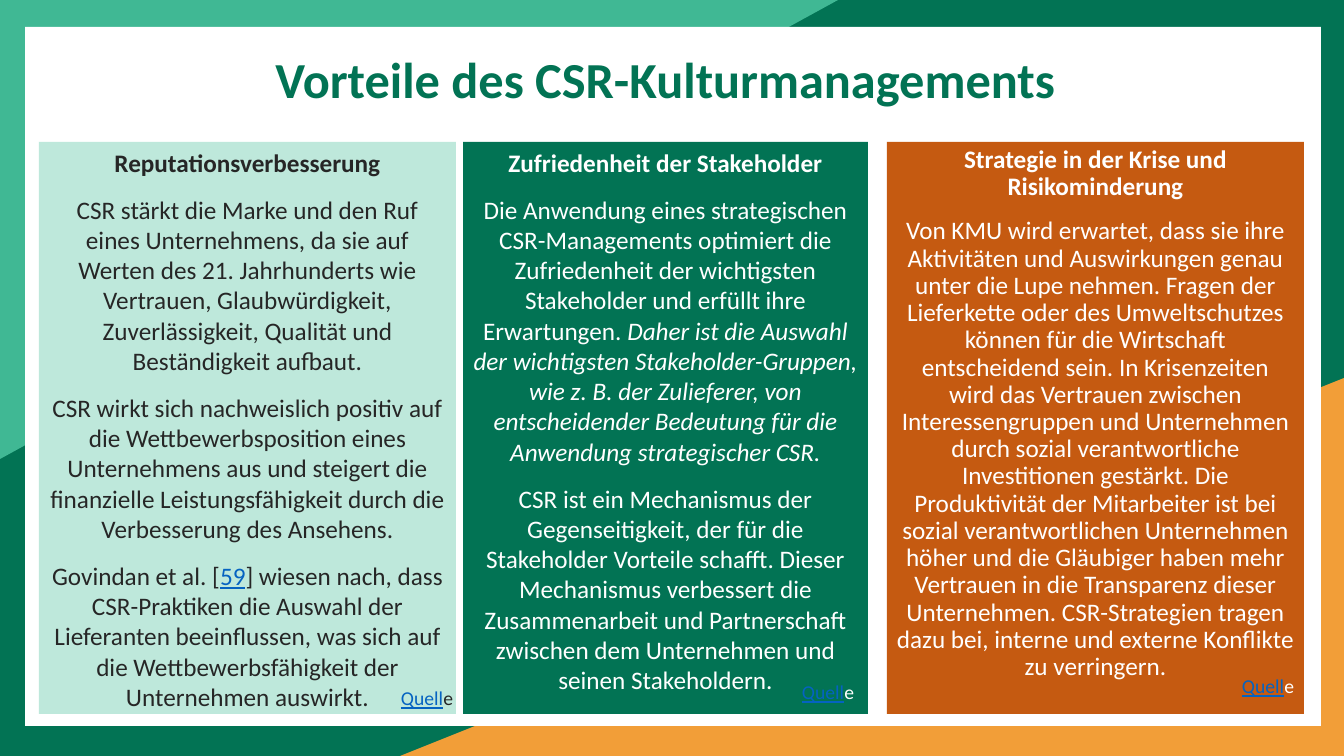
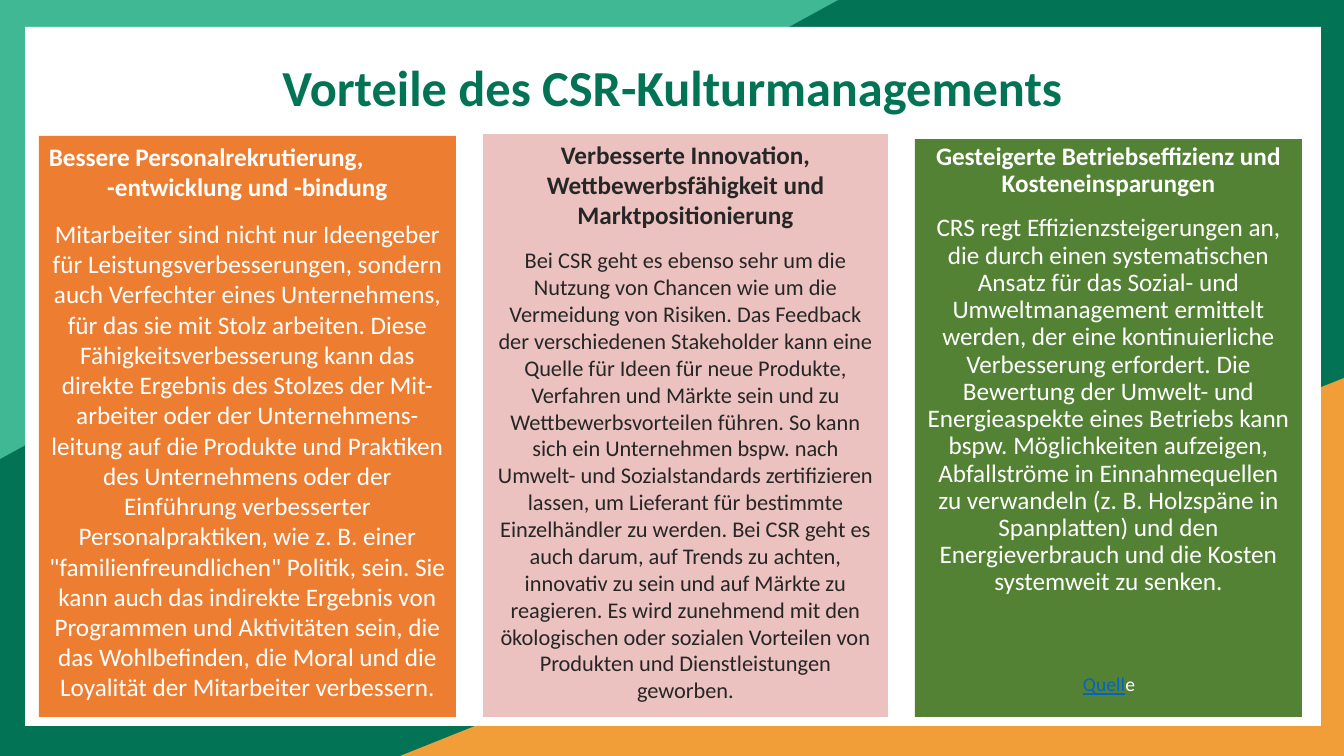
from dataclasses import dataclass

from pptx import Presentation
from pptx.dml.color import RGBColor
from pptx.enum.shapes import MSO_SHAPE
from pptx.enum.text import MSO_ANCHOR, PP_ALIGN
from pptx.util import Pt

RECTANGLE, TRIANGLE = MSO_SHAPE.RECTANGLE, MSO_SHAPE.ISOSCELES_TRIANGLE
LEFT, CENTER = PP_ALIGN.LEFT, PP_ALIGN.CENTER
TOP = MSO_ANCHOR.TOP
EMU_PER_PX = 914400 / 100.8


@dataclass(frozen=True)
class Theme:
    font: str = "Calibri"
    title_size: int = 36
    text_size: int = 18
    compact_size: int = 16
    source_size: int = 14
    paragraph_gap: int = 12
    title_spacing: float = 1.2
    tight_spacing: float = 0.9
    green: str = "027354"
    mint: str = "40B894"
    amber: str = "F29E38"
    white: str = "FFFFFF"
    dark: str = "262626"
    link: str = "0563C1"
    pale_mint: str = "BEE8DB"
    rust: str = "C55A11"
    orange: str = "ED7D31"
    pink: str = "EBC2BF"
    leaf: str = "548235"


THEME = Theme()
SLIDE_SIZE = (1344, 756)
TITLE = "Vorteile des CSR-Kulturmanagements"
TITLE_SIZE = (1157, 124)
SOURCE_SIZE = (120, 34)
SOURCE = [("Quell", "link"), ("e", "")]

FRAME = [
    (RECTANGLE, (0, 0, 1344, 756), THEME.green, 0),
    (TRIANGLE, (400, 378, 944, 378), THEME.amber, 0),
    (TRIANGLE, (0, 0, 838, 459), THEME.mint, 180),
    (RECTANGLE, (25, 27, 1296, 699), THEME.white, 0),
]

SLIDES = [
    {
        "title_at": (87, 31),
        "panels": [
            {
                "box": (39, 142, 417, 572),
                "fill": THEME.pale_mint,
                "color": THEME.dark,
                "heading": ["Reputationsverbesserung"],
                "body": [
                    "CSR stärkt die Marke und den Ruf eines Unternehmens, da sie auf Werten des 21. "
                    "Jahrhunderts wie Vertrauen, Glaubwürdigkeit, Zuverlässigkeit, Qualität und "
                    "Beständigkeit aufbaut.",
                    "CSR wirkt sich nachweislich positiv auf die Wettbewerbsposition eines Unternehmens "
                    "aus und steigert die finanzielle Leistungsfähigkeit durch die Verbesserung des "
                    "Ansehens.",
                    [
                        ("Govindan et al. [", ""),
                        ("59", "link"),
                        ("] wiesen nach, dass CSR-Praktiken die Auswahl der Lieferanten beeinflussen, "
                         "was sich auf die Wettbewerbsfähigkeit der Unternehmen auswirkt.", ""),
                    ],
                ],
                "source": (427, 681),
            },
            {
                "box": (463, 142, 405, 572),
                "fill": THEME.green,
                "heading": ["Zufriedenheit der Stakeholder"],
                "body": [
                    [
                        ("Die Anwendung eines strategischen CSR-Managements optimiert die Zufriedenheit "
                         "der wichtigsten Stakeholder und erfüllt ihre Erwartungen. ", ""),
                        ("Daher ist die Auswahl der wichtigsten Stakeholder-Gruppen, wie z. B. der "
                         "Zulieferer, von entscheidender Bedeutung für die Anwendung strategischer CSR.",
                         "italic"),
                    ],
                    "CSR ist ein Mechanismus der Gegenseitigkeit, der für die Stakeholder Vorteile "
                    "schafft. Dieser Mechanismus verbessert die Zusammenarbeit und Partnerschaft "
                    "zwischen dem Unternehmen und seinen Stakeholdern.",
                ],
                "source": (828, 675),
            },
            {
                "box": (887, 142, 417, 572),
                "fill": THEME.rust,
                "spacing": THEME.tight_spacing,
                "heading": ["Strategie in der Krise und Risikominderung"],
                "body": [
                    "Von KMU wird erwartet, dass sie ihre Aktivitäten und Auswirkungen genau unter die "
                    "Lupe nehmen. Fragen der Lieferkette oder des Umweltschutzes können für die "
                    "Wirtschaft entscheidend sein. In Krisenzeiten wird das Vertrauen zwischen "
                    "Interessengruppen und Unternehmen durch sozial verantwortliche Investitionen "
                    "gestärkt. Die Produktivität der Mitarbeiter ist bei sozial verantwortlichen "
                    "Unternehmen höher und die Gläubiger haben mehr Vertrauen in die Transparenz "
                    "dieser Unternehmen. CSR-Strategien tragen dazu bei, interne und externe Konflikte "
                    "zu verringern.",
                ],
                "source": (1268, 669),
            },
        ],
    },
    {
        "title_at": (94, 39),
        "panels": [
            {
                "box": (39, 136, 417, 581),
                "fill": THEME.orange,
                "heading": ["Bessere Personalrekrutierung,", "-entwicklung und -bindung"],
                "first_align": LEFT,
                "body": [
                    "Mitarbeiter sind nicht nur Ideengeber für Leistungsverbesserungen, sondern auch "
                    "Verfechter eines Unternehmens, für das sie mit Stolz arbeiten. Diese "
                    "Fähigkeitsverbesserung kann das direkte Ergebnis des Stolzes der Mit-arbeiter "
                    "oder der Unternehmens-leitung auf die Produkte und Praktiken des Unternehmens "
                    "oder der Einführung verbesserter Personalpraktiken, wie z. B. einer "
                    "\"familienfreundlichen\" Politik, sein. Sie kann auch das indirekte Ergebnis von "
                    "Programmen und Aktivitäten sein, die das Wohlbefinden, die Moral und die "
                    "Loyalität der Mitarbeiter verbessern.",
                ],
            },
            {
                "box": (483, 134, 405, 583),
                "fill": THEME.pink,
                "color": THEME.dark,
                "body_size": THEME.compact_size,
                "heading": ["Verbesserte Innovation, Wettbewerbsfähigkeit und Marktpositionierung"],
                "body": [
                    "Bei CSR geht es ebenso sehr um die Nutzung von Chancen wie um die Vermeidung von "
                    "Risiken. Das Feedback der verschiedenen Stakeholder kann eine Quelle für Ideen "
                    "für neue Produkte, Verfahren und Märkte sein und zu Wettbewerbsvorteilen führen. "
                    "So kann sich ein Unternehmen bspw. nach Umwelt- und Sozialstandards zertifizieren "
                    "lassen, um Lieferant für bestimmte Einzelhändler zu werden. Bei CSR geht es auch "
                    "darum, auf Trends zu achten, innovativ zu sein und auf Märkte zu reagieren. Es "
                    "wird zunehmend mit den ökologischen oder sozialen Vorteilen von Produkten und "
                    "Dienstleistungen geworben.",
                ],
            },
            {
                "box": (915, 139, 387, 578),
                "fill": THEME.leaf,
                "spacing": THEME.tight_spacing,
                "heading": ["Gesteigerte Betriebseffizienz und Kosteneinsparungen"],
                "body": [
                    "CRS regt Effizienzsteigerungen an, die durch einen systematischen Ansatz für das "
                    "Sozial- und Umweltmanagement ermittelt werden, der eine kontinuierliche "
                    "Verbesserung erfordert. Die Bewertung der Umwelt- und Energieaspekte eines "
                    "Betriebs kann bspw. Möglichkeiten aufzeigen, Abfallströme in Einnahmequellen zu "
                    "verwandeln (z. B. Holzspäne in Spanplatten) und den Energieverbrauch und die "
                    "Kosten systemweit zu senken.",
                ],
                "source": (1109, 667),
            },
        ],
    },
]


def px(*lengths):
    return [round(length * EMU_PER_PX) for length in lengths]


def add_block(slide, kind, box, fill, rotation=0):
    shape = slide.shapes.add_shape(kind, *px(*box))
    shape.shadow.inherit = False
    shape.fill.solid()
    shape.fill.fore_color.rgb = RGBColor.from_string(fill)
    shape.line.fill.background()
    shape.rotation = rotation
    if kind == TRIANGLE:
        shape.adjustments[0] = 1
    return shape


def write_paragraph(paragraph, content, size, color, bold=False, align=CENTER, spacing=1.0, before=0):
    paragraph.alignment = align
    paragraph.line_spacing = spacing
    paragraph.space_before = Pt(before)
    font = paragraph.font
    font.name, font.size, font.bold = THEME.font, Pt(size), bold
    font.color.rgb = RGBColor.from_string(color)
    for text, style in [(content, "")] if isinstance(content, str) else content:
        run = paragraph.add_run()
        run.text = text
        run.font.color.rgb = RGBColor.from_string(THEME.link if style == "link" else color)
        if style == "link":
            run.font.underline = True
        elif style == "italic":
            run.font.italic = True


def add_text(slide, box, content, **style):
    frame = slide.shapes.add_textbox(*px(*box)).text_frame
    frame.word_wrap = True
    write_paragraph(frame.paragraphs[0], content, **style)


def add_panel(slide, panel):
    frame = add_block(slide, RECTANGLE, panel["box"], panel["fill"]).text_frame
    frame.word_wrap = True
    frame.vertical_anchor = TOP
    color = panel.get("color", THEME.white)
    spacing = panel.get("spacing", 1.0)
    for index, line in enumerate(panel["heading"]):
        paragraph = frame.add_paragraph() if index else frame.paragraphs[0]
        align = CENTER if index else panel.get("first_align", CENTER)
        write_paragraph(paragraph, line, THEME.text_size, color, True, align, spacing)
    body_size = panel.get("body_size", THEME.text_size)
    for content in panel["body"]:
        write_paragraph(frame.add_paragraph(), content, body_size, color,
                        spacing=spacing, before=THEME.paragraph_gap)
    if "source" in panel:
        center, top = panel["source"]
        width, height = SOURCE_SIZE
        add_text(slide, (center - width // 2, top, width, height), SOURCE,
                 size=THEME.source_size, color=color)


def main():
    presentation = Presentation()
    presentation.slide_width, presentation.slide_height = px(*SLIDE_SIZE)
    for content in SLIDES:
        slide = presentation.slides.add_slide(presentation.slide_layouts[6])
        for block in FRAME:
            add_block(slide, *block)
        add_text(slide, content["title_at"] + TITLE_SIZE, TITLE, size=THEME.title_size,
                 color=THEME.green, bold=True, spacing=THEME.title_spacing)
        for panel in content["panels"]:
            add_panel(slide, panel)
    presentation.save("out.pptx")


if __name__ == "__main__":
    main()
